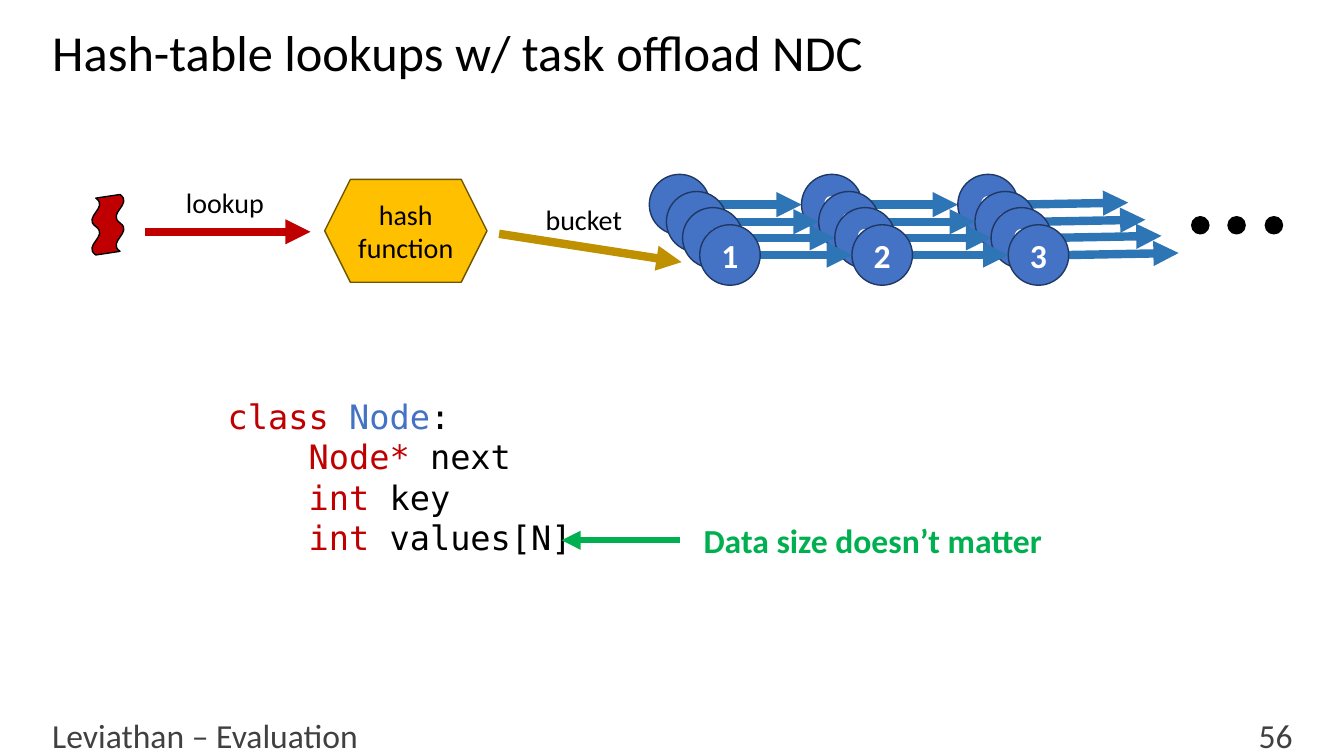
from lxml import etree
from pptx import Presentation
from pptx import util as u
from pptx.dml.color import RGBColor
from pptx.enum import shapes, text
from pptx.oxml.ns import qn

PX = 9144  # 100 px to the inch
SANS, MONO = "Calibri", "DejaVu Sans Mono"
INK = {
    "black": "000000", "white": "FFFFFF", "grey": "404040", "red": "C00000",
    "gold": "FFC000", "brown": "705400", "ochre": "BF9000", "blue": "4472C4",
    "navy": "203864", "link": "2E75B6", "green": "00B050",
}
KIND = shapes.MSO_SHAPE
ALIGN = text.PP_ALIGN
MID = text.MSO_ANCHOR.MIDDLE
TOP = text.MSO_ANCHOR.TOP


def rgb(name):
    return RGBColor.from_string(INK[name])


def emu(*nums):
    return [u.Emu(n * PX) for n in nums]


def write(shape, lines, size, align=ALIGN.LEFT, anchor=TOP, font=SANS, bold=False):
    """Fill a shape with lines, each a list of (words, colour) runs."""
    frame = shape.text_frame
    frame.word_wrap = True
    frame.vertical_anchor = anchor
    for i, line in enumerate(lines):
        para = frame.add_paragraph() if i else frame.paragraphs[0]
        para.alignment = align
        for words, ink in line:
            run = para.add_run()
            run.text = words
            run.font.name = font
            run.font.size = u.Pt(size)
            run.font.bold = bold
            run.font.color.rgb = rgb(ink)
    return frame


def label(slide, box, words, size, ink="black", **style):
    note = slide.shapes.add_textbox(*emu(*box))
    return write(note, [[(words, ink)]], size, **style)


def block(parent, kind, box, fill, edge):
    shape = parent.shapes.add_shape(kind, *emu(*box))
    shape.shadow.inherit = False
    shape.fill.solid()
    shape.fill.fore_color.rgb = rgb(fill)
    shape.line.color.rgb = rgb(edge)
    shape.line.width = u.Pt(1)
    return shape


def arrow(slide, start, end, ink, width=6):
    line = slide.shapes.add_connector(
        shapes.MSO_CONNECTOR.STRAIGHT, *emu(*start, *end))
    line.line.color.rgb = rgb(ink)
    line.line.width = u.Pt(width)
    etree.SubElement(line.line._get_or_add_ln(), qn("a:tailEnd"), type="triangle")
    etree.SubElement(line._element.spPr, qn("a:effectLst"))


def frame(slide, box):
    """Title, footer and page number."""
    x, y, w, h = box
    title = label(slide, (x, y, w, 85), "Hash-table lookups w/ task offload NDC",
                  36, anchor=MID)
    title.paragraphs[0].line_spacing = 0.9
    foot = y + h - 41
    label(slide, (x, foot, w - 114, 40), "Leviathan – Evaluation", 24, "grey",
          anchor=MID)
    label(slide, (x + w - 82, foot, 82, 41), "56", 24, "grey",
          align=ALIGN.RIGHT, anchor=MID)


def query(slide, box):
    """Thread, hash function and the arrows that lead to a bucket."""
    x, y, w, h = box
    wave = block(slide, KIND.DOUBLE_WAVE, (x, y + 29, 60, 32), "red", "black")
    wave.rotation = 90
    wave.adjustments[0], wave.adjustments[1] = 0.125, 0.03
    hexa = block(slide, KIND.HEXAGON, (x + 245, y, 161, h), "gold", "brown")
    write(hexa, [[("hash function", "black")]], 20, ALIGN.CENTER, MID)
    arrow(slide, (x + 67, y + 52), (x + 231, y + 52), "red")
    arrow(slide, (x + 418, y + 54), (x + w, y + 82), "ochre")
    label(slide, (x + 77, y + 1, 138, 48), "lookup", 20, align=ALIGN.CENTER)
    label(slide, (x + 433, y + 18, 138, 48), "bucket", 20, align=ALIGN.CENTER)


def chains(slide, box):
    """Four stacked chains of three nodes, the last one in front."""
    x, y, w, h = box
    size = 60
    reach = w - 50
    for layer in range(4):
        shift = round(layer * 50 / 3)
        left, top = x + shift, y + shift
        nodes = [left, left + 151, left + 306]
        mid = top + size // 2
        for node, end in zip(nodes, nodes[1:] + [left + reach]):
            rise = 2 if end == left + reach else 0
            arrow(slide, (node + size, mid), (end, mid - rise), "link")
        for num, node in enumerate(nodes, 1):
            ball = block(slide, KIND.OVAL, (node, top, size, size), "blue", "navy")
            write(ball, [[(str(num), "white")]], 24, ALIGN.CENTER, MID, bold=True)


def dots(slide, box):
    x, y, w, h = box
    group = slide.shapes.add_group_shape()
    for i in range(3):
        spot = (x + round(i * (w - h) / 2), y, h, h)
        block(group, KIND.OVAL, spot, "black", "black")


def code(slide, box):
    """Node class with a remark on its last field."""
    x, y, w, h = box
    lines = [
        [("class ", "red"), ("Node", "blue"), (":", "black")],
        [("    Node*", "red"), (" next", "black")],
        [("    int ", "red"), ("key", "black")],
        [("    int ", "red"), ("values[N]", "black")],
    ]
    write(slide.shapes.add_textbox(*emu(x, y, 459, h)), lines, 24, font=MONO)
    label(slide, (x + w - 370, y + 123, 370, 50), "Data size doesn’t matter",
          24, "green", bold=True)
    arrow(slide, (x + 458, y + 148), (x + 341, y + 148), "green", 4.5)


def main():
    deck = Presentation()
    deck.slide_width, deck.slide_height = emu(1333, 750)
    slide = deck.slides.add_slide(deck.slide_layouts[6])
    frame(slide, (42, 12, 1250, 738))
    chains(slide, (644, 173, 525, 110))
    dots(slide, (1182, 215, 90, 17))
    query(slide, (77, 178, 599, 102))
    code(slide, (216, 388, 842, 203))
    deck.save("out.pptx")


if __name__ == "__main__":
    main()
